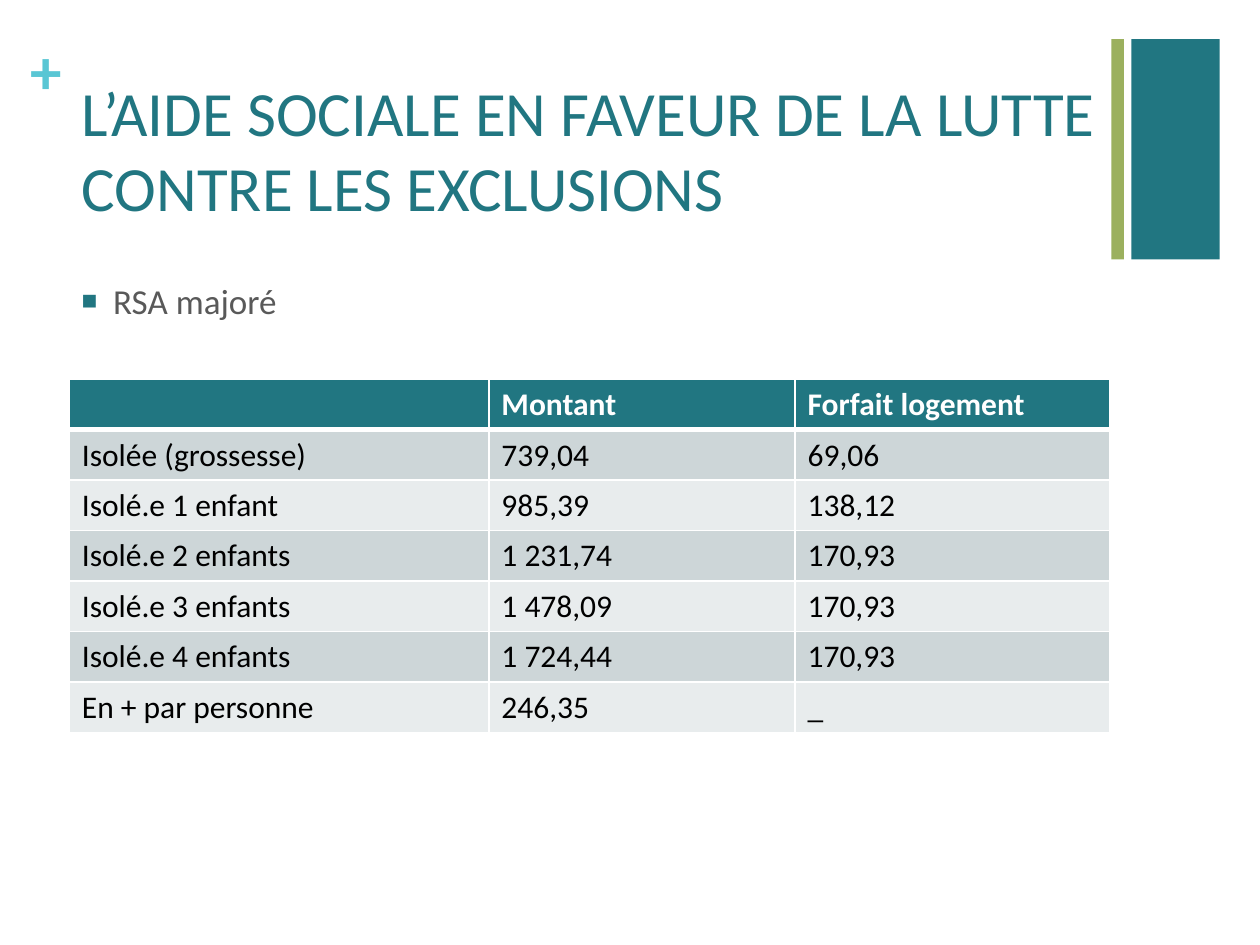
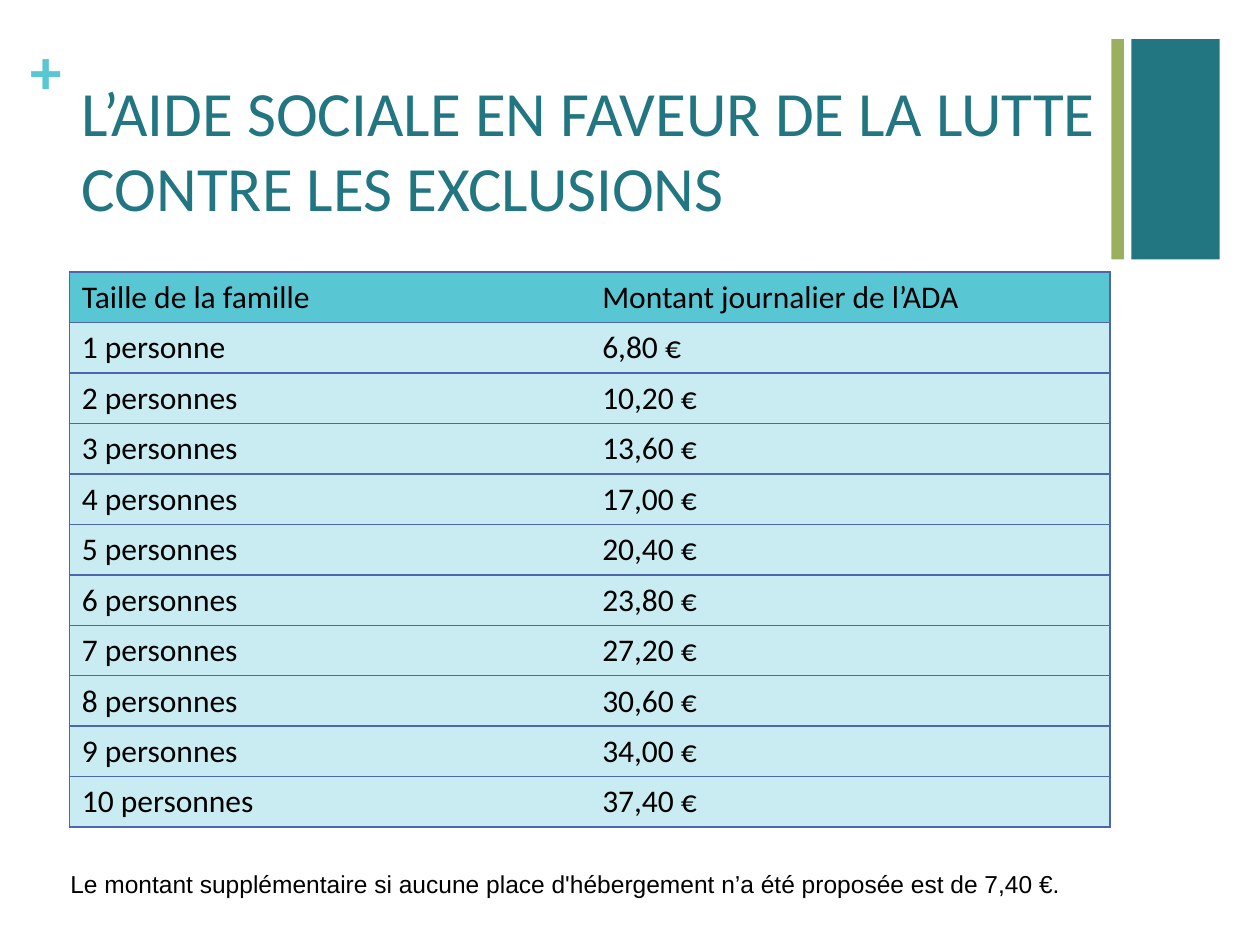
from dataclasses import dataclass
from typing import NamedTuple

from lxml.etree import SubElement
from pptx import Presentation
from pptx.dml.color import RGBColor
from pptx.enum.shapes import MSO_SHAPE as Shape
from pptx.enum.text import MSO_ANCHOR as Anchor
from pptx.oxml.ns import qn
from pptx.slide import Slide
from pptx.text.text import TextFrame
from pptx.util import Inches, Pt


@dataclass(frozen=True)
class Theme:
    teal: str = "217681"
    aqua: str = "59C6D4"
    pale_aqua: str = "C8ECF1"
    green: str = "9BB05E"
    grey: str = "595959"
    band_dark: str = "CDD6D8"
    band_light: str = "E8ECED"
    rule_blue: str = "4E66B2"
    white: str = "FFFFFF"
    black: str = "000000"
    font: str = "Calibri"
    note_font: str = "Arial"
    title_size: int = 36
    body_size: int = 20
    table_size: int = 18
    note_size: int = 14


THEME = Theme()
TITLE = "L’AIDE SOCIALE EN FAVEUR DE LA LUTTE CONTRE LES EXCLUSIONS"
LEFT, CONTENT_WIDTH = 0.55, 8.26
ROW_HEIGHT = 0.4


class Box(NamedTuple):
    left: float
    top: float
    width: float
    height: float

    def lengths(self) -> list[Inches]:
        return [Inches(value) for value in self]


class Band(NamedTuple):
    box: Box
    color: str


class Rule(NamedTuple):
    color: str
    width: float


@dataclass(frozen=True)
class TableLook:
    header_fill: str
    header_color: str
    header_bold: bool
    row_fills: tuple[str, ...]
    rule: Rule
    header_rule: Rule
    inner_verticals: bool
    anchor: Anchor


BANDS = (
    Band(Box(8.98, 0.31, 0.7, 1.75), THEME.teal),
    Band(Box(8.82, 0.31, 0.1, 1.75), THEME.green),
)

RSA_LOOK = TableLook(
    THEME.teal, THEME.white, True, (THEME.band_dark, THEME.band_light),
    Rule(THEME.white, 1), Rule(THEME.white, 3), True, Anchor.TOP,
)
ADA_LOOK = TableLook(
    THEME.aqua, THEME.black, False, (THEME.pale_aqua,),
    Rule(THEME.rule_blue, 1), Rule(THEME.rule_blue, 1), False, Anchor.MIDDLE,
)

RSA_ROWS = [
    ("", "Montant", "Forfait logement"),
    ("Isolée (grossesse)", "739,04", "69,06"),
    ("Isolé.e 1 enfant", "985,39", "138,12"),
    ("Isolé.e 2 enfants", "1 231,74", "170,93"),
    ("Isolé.e 3 enfants", "1 478,09", "170,93"),
    ("Isolé.e 4 enfants", "1 724,44", "170,93"),
    ("En + par personne", "246,35", "_"),
]
ADA_ROWS = [
    ("Taille de la famille", "Montant journalier de l’ADA"),
    ("1 personne", "6,80 €"),
    ("2 personnes", "10,20 €"),
    ("3 personnes", "13,60 €"),
    ("4 personnes", "17,00 €"),
    ("5 personnes", "20,40 €"),
    ("6 personnes", "23,80 €"),
    ("7 personnes", "27,20 €"),
    ("8 personnes", "30,60 €"),
    ("9 personnes", "34,00 €"),
    ("10 personnes", "37,40 €"),
]


def write(frame: TextFrame, text: str, *, size: int, color: str,
          font: str = THEME.font, bold: bool = False,
          anchor: Anchor = Anchor.TOP, inset: bool = True,
          bullet: str = "") -> None:
    frame.word_wrap = True
    frame.vertical_anchor = anchor
    if not inset:
        frame.margin_left = frame.margin_right = 0
        frame.margin_top = frame.margin_bottom = 0
    paragraph = frame.paragraphs[0]
    run = paragraph.add_run()
    run.text = text
    run.font.name = font
    run.font.size = Pt(size)
    run.font.bold = bold
    run.font.color.rgb = RGBColor.from_string(color)
    if bullet:
        props = paragraph._p.get_or_add_pPr()
        props.set("marL", str(Inches(0.25)))
        props.set("indent", str(Inches(-0.25)))
        bullet_color = SubElement(props, qn("a:buClr"))
        SubElement(bullet_color, qn("a:srgbClr"), val=THEME.teal)
        SubElement(props, qn("a:buSzPct"), val="75000")
        SubElement(props, qn("a:buFont"), typeface=THEME.note_font)
        SubElement(props, qn("a:buChar"), char=bullet)


def add_text(slide: Slide, box: Box, text: str, **style) -> None:
    write(slide.shapes.add_textbox(*box.lengths()).text_frame, text, **style)


def add_band(slide: Slide, band: Band) -> None:
    bar = slide.shapes.add_shape(Shape.RECTANGLE, *band.box.lengths())
    bar.shadow.inherit = False
    bar.fill.solid()
    bar.fill.fore_color.rgb = RGBColor.from_string(band.color)
    bar.line.fill.background()


def set_border(cell, side: str, rule: Rule | None) -> None:
    props = cell._tc.get_or_add_tcPr()
    width = rule.width if rule else 0
    line = SubElement(props, qn(f"a:ln{side}"), w=str(Pt(width)))
    if rule:
        fill = SubElement(line, qn("a:solidFill"))
        SubElement(fill, qn("a:srgbClr"), val=rule.color)
    else:
        SubElement(line, qn("a:noFill"))


def add_amounts(slide: Slide, top: float, widths: list[float],
                rows: list[tuple[str, ...]], look: TableLook) -> None:
    box = Box(LEFT, top, sum(widths), ROW_HEIGHT * len(rows))
    amounts = slide.shapes.add_table(len(rows), len(widths), *box.lengths()).table
    amounts.horz_banding = False
    for column, width in zip(amounts.columns, widths):
        column.width = Inches(width)
    last = len(widths) - 1
    for r, labels in enumerate(rows):
        header = r == 0
        fill = look.header_fill if header else look.row_fills[(r - 1) % len(look.row_fills)]
        for c, label in enumerate(labels):
            cell = amounts.cell(r, c)
            inner = look.rule if look.inner_verticals else None
            set_border(cell, "L", look.rule if c == 0 else inner)
            set_border(cell, "R", look.rule if c == last else inner)
            set_border(cell, "T", look.header_rule if r == 1 else look.rule)
            set_border(cell, "B", look.header_rule if header else look.rule)
            cell.fill.solid()
            cell.fill.fore_color.rgb = RGBColor.from_string(fill)
            cell.vertical_anchor = look.anchor
            if label:
                write(cell.text_frame, label, size=THEME.table_size,
                      color=look.header_color if header else THEME.black,
                      bold=header and look.header_bold, anchor=look.anchor)


def add_base_slide(deck) -> Slide:
    slide = deck.slides.add_slide(deck.slide_layouts[5])
    for band in BANDS:
        add_band(slide, band)
    add_text(slide, Box(0.24, 0.25, 0.29, 0.61), "+", size=THEME.title_size,
             color=THEME.aqua, bold=True, inset=False)
    heading = slide.shapes.title
    heading.left, heading.top, heading.width, heading.height = (
        Box(LEFT, 0.53, CONTENT_WIDTH, 1.22).lengths())
    write(heading.text_frame, TITLE, size=THEME.title_size, color=THEME.teal)
    heading.text_frame.auto_size = None
    heading.text_frame.paragraphs[0].alignment = 1
    return slide


def main() -> None:
    deck = Presentation()
    deck.slide_width, deck.slide_height = Inches(10), Inches(7.5)

    rsa = add_base_slide(deck)
    add_text(rsa, Box(LEFT, 2.17, CONTENT_WIDTH, 0.6), "RSA majoré",
             size=THEME.body_size, color=THEME.grey, bullet="■")
    add_amounts(rsa, 3.01, [3.33, 2.43, 2.5], RSA_ROWS, RSA_LOOK)

    ada = add_base_slide(deck)
    add_amounts(ada, 2.16, [CONTENT_WIDTH / 2] * 2, ADA_ROWS, ADA_LOOK)
    add_text(ada, Box(0.46, 6.84, 8.34, 0.34),
             "Le montant supplémentaire si aucune place d'hébergement "
             "n’a été proposée est de 7,40 €.",
             size=THEME.note_size, color=THEME.black,
             font=THEME.note_font, anchor=Anchor.MIDDLE)

    deck.save("out.pptx")


if __name__ == "__main__":
    main()
